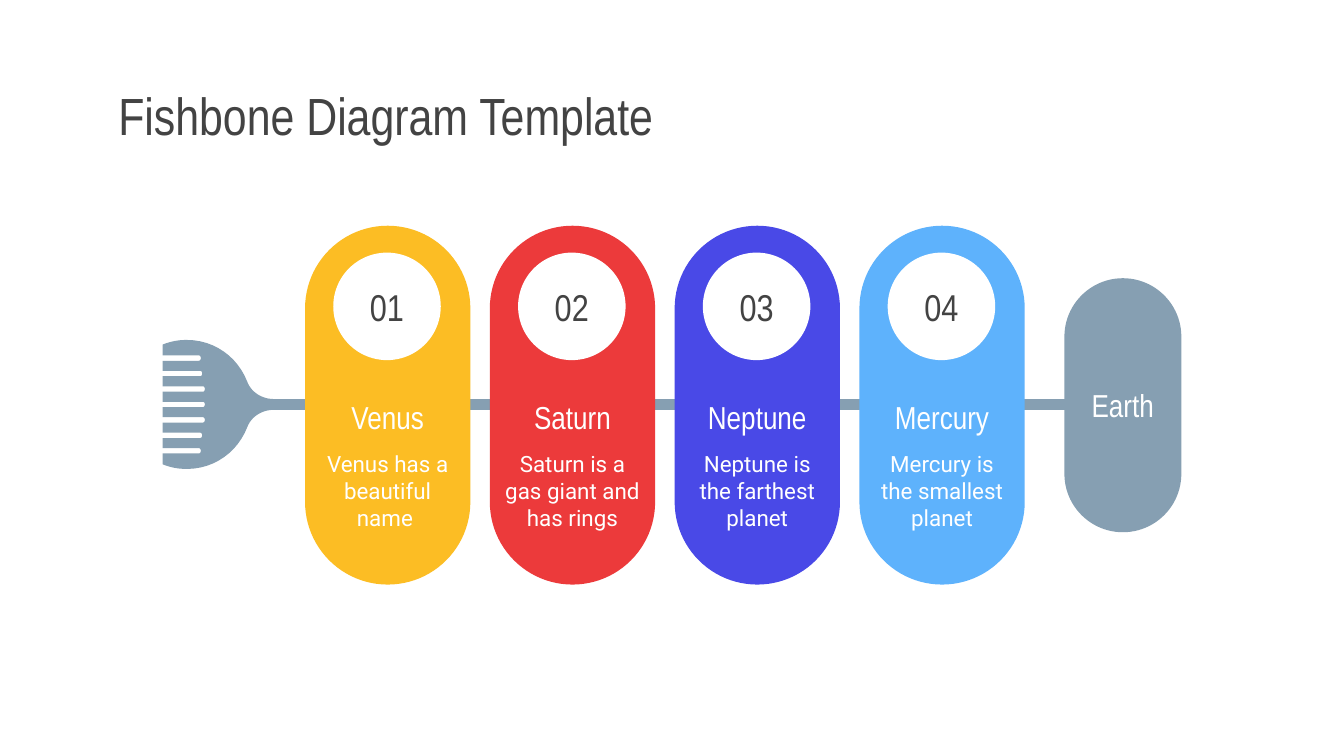
from pptx import Presentation
from pptx.dml.color import RGBColor
from pptx.enum import shapes, text
from pptx.util import Inches, Pt

WHITE = RGBColor(0xFF, 0xFF, 0xFF)
DARK = RGBColor(0x43, 0x43, 0x43)
STEEL = RGBColor(0x86, 0x9F, 0xB2)
YELLOW = RGBColor(0xFC, 0xBD, 0x24)
RED = RGBColor(0xEC, 0x3A, 0x3B)
INDIGO = RGBColor(0x49, 0x49, 0xE7)
SKY = RGBColor(0x5E, 0xB2, 0xFC)
HEADING_FONT, BODY_FONT = "Arial Narrow", "Roboto"

PLANETS = [
    ("Venus", "Venus has a beautiful name ", YELLOW),
    ("Saturn", "Saturn is a gas giant and has rings", RED),
    ("Neptune", "Neptune is the farthest planet", INDIGO),
    ("Mercury", "Mercury is the smallest planet", SKY),
]


def write(shape, words, size, color, font=HEADING_FONT, wrap=True,
          align=text.PP_ALIGN.CENTER, anchor=text.MSO_ANCHOR.MIDDLE):
    frame = shape.text_frame
    frame.text = words
    frame.word_wrap = wrap
    frame.auto_size = text.MSO_AUTO_SIZE.NONE
    frame.vertical_anchor = anchor
    frame.margin_left = frame.margin_right = Inches(0.1)
    frame.margin_top = frame.margin_bottom = Inches(0.1)
    para = frame.paragraphs[0]
    para.alignment = align
    span = para.runs[0]
    span.font.name = font
    span.font.size = Pt(size)
    span.font.color.rgb = color


def paint(shape, color):
    shape.fill.solid()
    shape.fill.fore_color.rgb = color
    shape.line.fill.background()
    shape.shadow.inherit = False


def add_solid(group, kind, box, color):
    shape = group.shapes.add_shape(kind, *map(Inches, box))
    paint(shape, color)
    return shape


def add_pill(group, box, color):
    pill = add_solid(group, shapes.MSO_SHAPE.ROUNDED_RECTANGLE, box, color)
    pill.adjustments[0] = 0.5
    return pill


def add_label(group, box, words, size, **style):
    label = group.shapes.add_textbox(*map(Inches, box))
    write(label, words, size, WHITE, **style)


def curve(start, first, second, end, steps=12):
    """Points along a cubic curve, without its start."""
    points = []
    for step in range(1, steps + 1):
        t = step / steps
        weights = ((1 - t) ** 3, 3 * t * (1 - t) ** 2, 3 * t * t * (1 - t), t ** 3)
        points.append(tuple(
            sum(weight * value for weight, value in zip(weights, values))
            for values in zip(start, first, second, end)))
    return points


def add_tail(group, left, top):
    height, slot_pitch, slot_half = 0.96, 0.115, 0.02
    # Lower half of the fin, from the back edge to the spine
    lower = [(0, 0.925)]
    lower += curve(lower[-1], (0.06, 0.95), (0.12, height), (0.18, height))
    lower += curve(lower[-1], (0.39, height), (0.56, 0.83), (0.63, 0.65))
    lower += curve(lower[-1], (0.66, 0.57), (0.74, 0.52), (0.83, 0.52))
    upper = [(x, height - y) for x, y in reversed(lower)]
    # Rounded slots along the back edge
    slots = []
    for index, tip in enumerate((0.29, 0.3, 0.32, 0.32, 0.32, 0.3, 0.29)):
        middle = height / 2 + (index - 3) * slot_pitch
        above, below = middle - slot_half, middle + slot_half
        neck = tip - slot_half
        slots += [(0, above), (neck, above)]
        slots += curve((neck, above), (tip, above), (tip, below), (neck, below))
        slots.append((0, below))
    outline = [(Inches(left + x), Inches(top + y)) for x, y in lower + upper + slots]
    builder = group.shapes.build_freeform(*outline[0], scale=1.0)
    builder.add_line_segments(outline[1:], close=True)
    paint(builder.convert_to_shape(), STEEL)


def add_fish(page, left, top):
    """Tail, spine and head, behind the planet columns."""
    group = page.shapes.add_group_shape()
    add_tail(group, left, top + 0.46)
    add_solid(group, shapes.MSO_SHAPE.RECTANGLE,
              (left + 0.83, top + 0.9, 6.13, 0.08), STEEL)
    head = add_pill(group, (left + 6.71, top, 0.87, 1.89), STEEL)
    write(head, "Earth", 17, WHITE, wrap=False)


def add_column(page, left, top, number, name, detail, color):
    width = 1.23
    group = page.shapes.add_group_shape()
    add_pill(group, (left, top, width, 2.67), color)
    disc = add_solid(group, shapes.MSO_SHAPE.OVAL,
                     (left + 0.21, top + 0.2, 0.8, 0.8), WHITE)
    write(disc, f"{number:02d}", 20, DARK)
    add_label(group, (left, top + 1.19, width, 0.47), name, 17)
    add_label(group, (left, top + 1.57, width, 0.76), detail, 12,
              font=BODY_FONT, anchor=text.MSO_ANCHOR.TOP)


def add_title(page, left, top, width, height):
    title = page.shapes.title
    title.left, title.top = Inches(left), Inches(top)
    title.width, title.height = Inches(width), Inches(height)
    write(title, "Fishbone Diagram Template", 28, DARK, align=text.PP_ALIGN.LEFT)


def main():
    deck = Presentation()
    # Widescreen, 16 to 9
    deck.slide_width, deck.slide_height = Inches(10), Inches(10 * 9 / 16)
    page = deck.slides.add_slide(deck.slide_layouts[5])
    add_title(page, 0.78, 0.59, 8.45, 0.53)
    add_fish(page, 1.21, 2.07)
    # Planet columns at an even pitch
    for index, (name, detail, color) in enumerate(PLANETS):
        add_column(page, 2.27 + index * 1.375, 1.68, index + 1, name, detail, color)
    deck.save("out.pptx")


if __name__ == "__main__":
    main()
